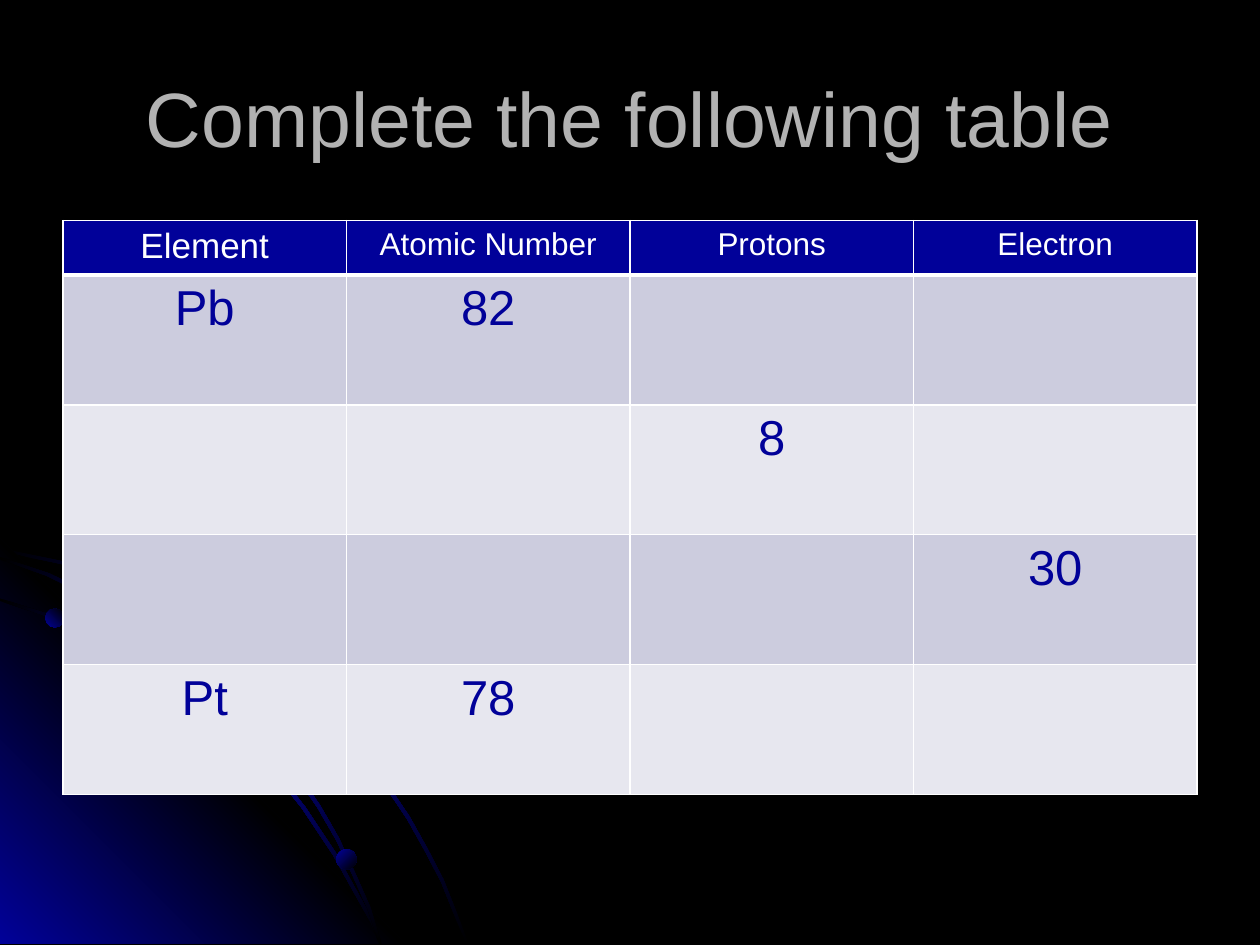
from copy import deepcopy

from lxml.etree import SubElement
from pptx import Presentation
from pptx.dml.color import RGBColor
from pptx.enum.shapes import MSO_SHAPE as SHAPE
from pptx.enum.text import MSO_ANCHOR as ANCHOR, PP_ALIGN as ALIGN
from pptx.oxml.ns import qn
from pptx.util import Inches, Pt

FONT = "Arial"
COLORS = {
    "black": "000000",
    "blue": "010199",
    "title": "B2B2B2",
    "white": "FFFFFF",
    "band_dark": "CCCCDE",
    "band_light": "E7E7EF",
}
GLOW = ("black", "blue", "black")
CORNER = ("blue", "black", "blue")
BALL = ("blue", "black")

# Upper edges of the three orbit lines, in inches
OUTER_ORBIT = [
    (0, 4.35), (0.28, 4.41), (0.57, 4.47), (0.98, 4.59), (1.36, 4.77),
    (1.74, 4.97), (2.09, 5.21), (2.42, 5.48), (2.72, 5.78), (3, 6.11),
    (3.25, 6.48), (3.39, 6.73), (3.52, 6.98), (3.62, 7.23), (3.72, 7.49)]
INNER_ORBIT = [
    (0, 4.75), (0.41, 4.88), (0.79, 5.05), (1.17, 5.26), (1.52, 5.49),
    (1.84, 5.76), (2.15, 6.06), (2.42, 6.4), (2.66, 6.76), (2.86, 7.12),
    (2.96, 7.3), (3.03, 7.49)]
MIDDLE_ORBIT = [
    (0, 4.42), (0.39, 4.55), (0.76, 4.73), (1.11, 4.93), (1.44, 5.16),
    (1.75, 5.43), (2.04, 5.73), (2.29, 6.03), (2.54, 6.39), (2.69, 6.65),
    (2.82, 6.93), (2.94, 7.2), (3.03, 7.49)]
TRIANGLE = [(0, 4.27), (3.22, 7.49), (0, 7.49)]

HEADERS = ["Element", "Atomic Number", "Protons", "Electron"]
ROWS = [
    ["Pb", "82", "", ""],
    ["", "", "8", ""],
    ["", "", "", "30"],
    ["Pt", "78", "", ""],
]


def rgb(name):
    return RGBColor.from_string(COLORS[name])


def paint_gradient(sp, names, angle):
    """Fill with evenly spaced colours; the angle runs counter-clockwise."""
    sp.shadow.inherit = False
    sp.line.fill.background()
    sp.fill.gradient()
    sp.fill.gradient_angle = angle
    stops = sp._element.spPr.find(qn("a:gradFill")).find(qn("a:gsLst"))
    while len(stops) < len(names):
        stops.append(deepcopy(stops[-1]))
    for i, (stop, name) in enumerate(zip(sp.fill.gradient_stops, names)):
        stop.color.rgb = rgb(name)
        stop.position = i / (len(names) - 1)


def add_outline(s, points, names, angle):
    pts = [(Inches(x), Inches(y)) for x, y in points]
    builder = s.shapes.build_freeform(*pts[0])
    builder.add_line_segments(pts[1:], close=True)
    paint_gradient(builder.convert_to_shape(), names, angle)


def add_orbit(s, upper, width=0.02):
    """Draw a thin curved band below the given upper edge."""
    lower = [(max(x - width, 0), min(y + width, 7.49)) for x, y in upper]
    add_outline(s, upper + lower[::-1], GLOW, 315)


def add_ball(s, x, y, size, angle):
    sp = s.shapes.add_shape(SHAPE.OVAL, Inches(x), Inches(y),
                            Inches(size), Inches(size))
    paint_gradient(sp, BALL, angle)


def style_paragraph(p, text, size, color):
    p.text = text
    p.alignment = ALIGN.CENTER
    p.font.name = FONT
    p.font.size = Pt(size)
    p.font.color.rgb = rgb(color)


def add_title(s, text):
    tf = s.shapes.add_textbox(Inches(0.5), Inches(0.3),
                              Inches(9), Inches(1.25)).text_frame
    tf.word_wrap = True
    tf.vertical_anchor = ANCHOR.MIDDLE
    style_paragraph(tf.paragraphs[0], text, 44, "title")


def set_borders(cell, bottom):
    tc_pr = cell._tc.get_or_add_tcPr()
    for side, width in (("L", 1), ("R", 1), ("T", 1), ("B", bottom)):
        ln = SubElement(tc_pr, qn(f"a:ln{side}"), w=str(Pt(width)))
        fill = SubElement(ln, qn("a:solidFill"))
        SubElement(fill, qn("a:srgbClr"), val=COLORS["white"])


def fill_cell(cell, text, size, color, background, bottom=1):
    set_borders(cell, bottom)
    cell.fill.solid()
    cell.fill.fore_color.rgb = rgb(background)
    style_paragraph(cell.text_frame.paragraphs[0], text, size, color)


def add_element_table(s):
    table = s.shapes.add_table(len(ROWS) + 1, len(HEADERS), Inches(0.5),
                               Inches(1.75), Inches(9), Inches(4.55)).table
    for i, row in enumerate(table.rows):
        row.height = Inches(1.03 if i else 0.43)
    for c, text in enumerate(HEADERS):
        fill_cell(table.cell(0, c), text, 18 if c else 20, "white", "blue", 3)
    for r, values in enumerate(ROWS, 1):
        band = "band_dark" if r % 2 else "band_light"
        for c, text in enumerate(values):
            fill_cell(table.cell(r, c), text, 28, "blue", band)


def main():
    prs = Presentation()
    prs.slide_width, prs.slide_height = Inches(10), Inches(7.5)
    s = prs.slides.add_slide(prs.slide_layouts[6])
    s.background.fill.solid()
    s.background.fill.fore_color.rgb = rgb("black")

    add_orbit(s, OUTER_ORBIT)
    add_outline(s, TRIANGLE, CORNER, 45)
    add_orbit(s, INNER_ORBIT)
    add_orbit(s, MIDDLE_ORBIT)
    add_ball(s, 0.36, 4.83, 0.15, 45)
    add_ball(s, 2.67, 6.74, 0.16, 315)
    add_ball(s, 1.37, 4.73, 0.21, 45)

    add_title(s, "Complete the following table")
    add_element_table(s)
    prs.save("out.pptx")


if __name__ == "__main__":
    main()
